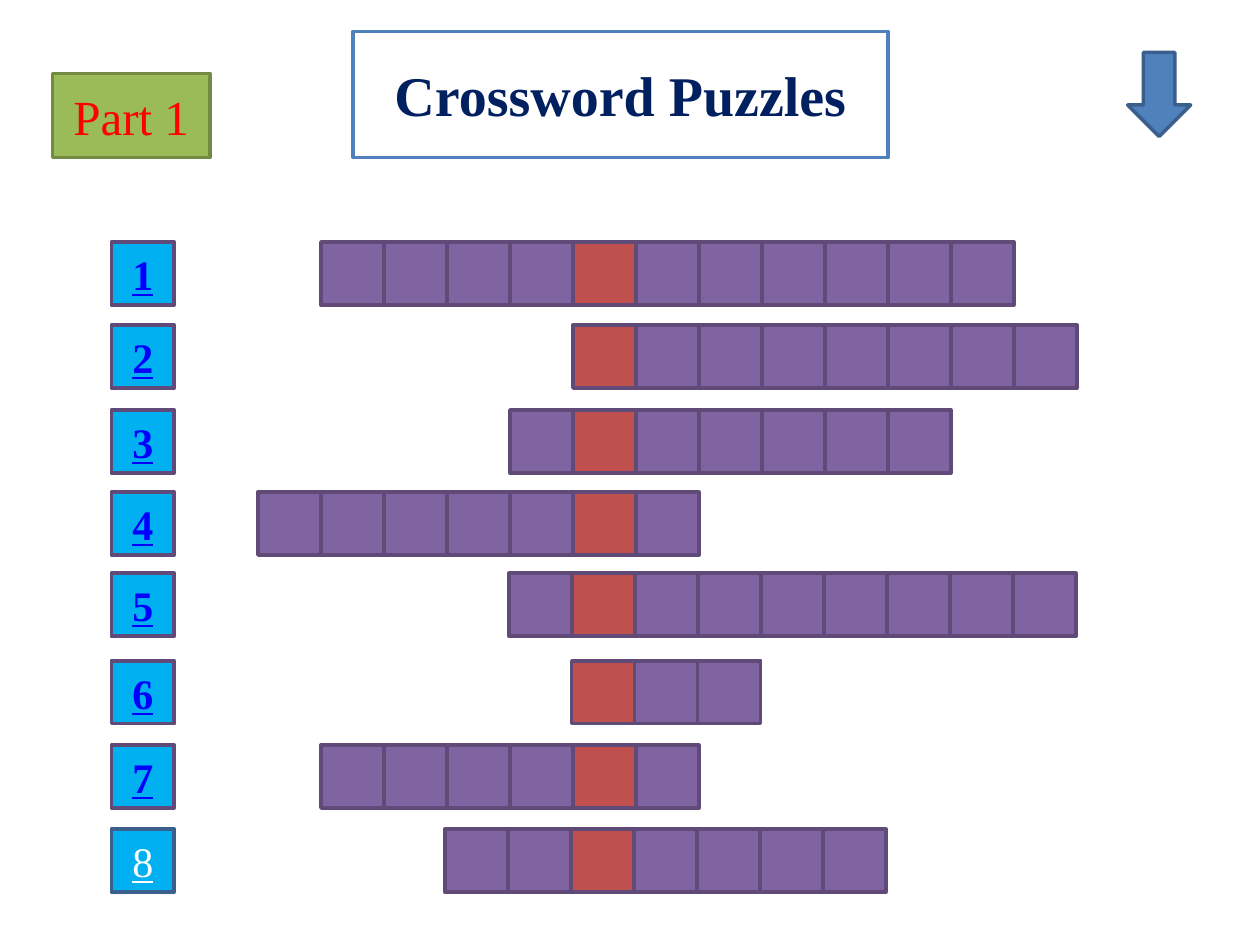
from dataclasses import dataclass

from pptx import Presentation
from pptx import util as u
from pptx.dml.color import RGBColor
from pptx.enum import shapes, text


@dataclass(frozen=True)
class Theme:
    font: str = "Times New Roman"
    title_size: int = 32
    part_size: int = 28
    number_size: int = 24
    white: str = "FFFFFF"
    navy: str = "002060"
    blue: str = "4F81BD"
    dark_blue: str = "3A5F8C"
    green: str = "9BBB59"
    dark_green: str = "738A42"
    red: str = "FF0000"
    sky: str = "00B0F0"
    link: str = "0000FF"
    purple: str = "8064A2"
    dark_purple: str = "5F4A78"
    key: str = "C0504D"


THEME = Theme()
CELL = 36
GRID_LEFT = 147.4
KEY_COLUMN = 5
NUMBER_LEFT = 63.6

# Each word: row top, first column, letter count, shift of the row
WORDS = [
    (138.3, 1, 11, 0),
    (185.8, 5, 8, 0),
    (234.3, 4, 7, 0),
    (281.2, 0, 7, 0),
    (327.6, 4, 9, -0.5),
    (377.6, 5, 3, -0.7),
    (425.8, 1, 6, 0),
    (473.8, 3, 7, -1.2),
]


def add_block(slide, box, fill, line, kind=shapes.MSO_SHAPE.RECTANGLE):
    shape = slide.shapes.add_shape(kind, *(u.Pt(length) for length in box))
    shape.shadow.inherit = False
    shape.fill.solid()
    shape.fill.fore_color.rgb = RGBColor.from_string(fill)
    shape.line.color.rgb = RGBColor.from_string(line)
    shape.line.width = u.Pt(2)
    return shape


def add_label(shape, words, size, color, bold=False, underline=False):
    frame = shape.text_frame
    frame.word_wrap = True
    frame.vertical_anchor = text.MSO_ANCHOR.MIDDLE
    paragraph = frame.paragraphs[0]
    paragraph.alignment = text.PP_ALIGN.CENTER
    run = paragraph.add_run()
    run.text = words
    run.font.name = THEME.font
    run.font.size = u.Pt(size)
    run.font.bold = bold
    run.font.underline = underline
    run.font.color.rgb = RGBColor.from_string(color)


def add_number(slide, number, top, is_last):
    line = THEME.dark_blue if is_last else THEME.dark_purple
    color = THEME.white if is_last else THEME.link
    shape = add_block(slide, (NUMBER_LEFT, top, CELL, CELL), THEME.sky, line)
    add_label(shape, str(number), THEME.number_size, color,
              bold=not is_last, underline=True)


def add_word(slide, top, first, count, shift):
    for column in range(first, first + count):
        left = GRID_LEFT + column * CELL + shift
        fill = THEME.key if column == KEY_COLUMN else THEME.purple
        add_block(slide, (left, top, CELL, CELL), fill, THEME.dark_purple)


def main():
    presentation = Presentation()
    presentation.slide_width = u.Pt(720)
    presentation.slide_height = u.Pt(540)
    slide = presentation.slides.add_slide(presentation.slide_layouts[6])

    # Header: part label, title and arrow
    part = add_block(slide, (30, 42, 90, 48), THEME.green, THEME.dark_green)
    add_label(part, "Part 1", THEME.part_size, THEME.red)
    title = add_block(slide, (201.6, 18, 306, 72), THEME.white, THEME.blue)
    add_label(title, "Crossword Puzzles", THEME.title_size, THEME.navy, bold=True)
    add_block(slide, (644.4, 30, 36, 48), THEME.blue, THEME.dark_blue,
              shapes.MSO_SHAPE.DOWN_ARROW)

    # Crossword: a number and a row of letter cells for each word
    for number, (top, first, count, shift) in enumerate(WORDS, start=1):
        add_number(slide, number, top, number == len(WORDS))
        add_word(slide, top, first, count, shift)

    presentation.save("out.pptx")


if __name__ == "__main__":
    main()
